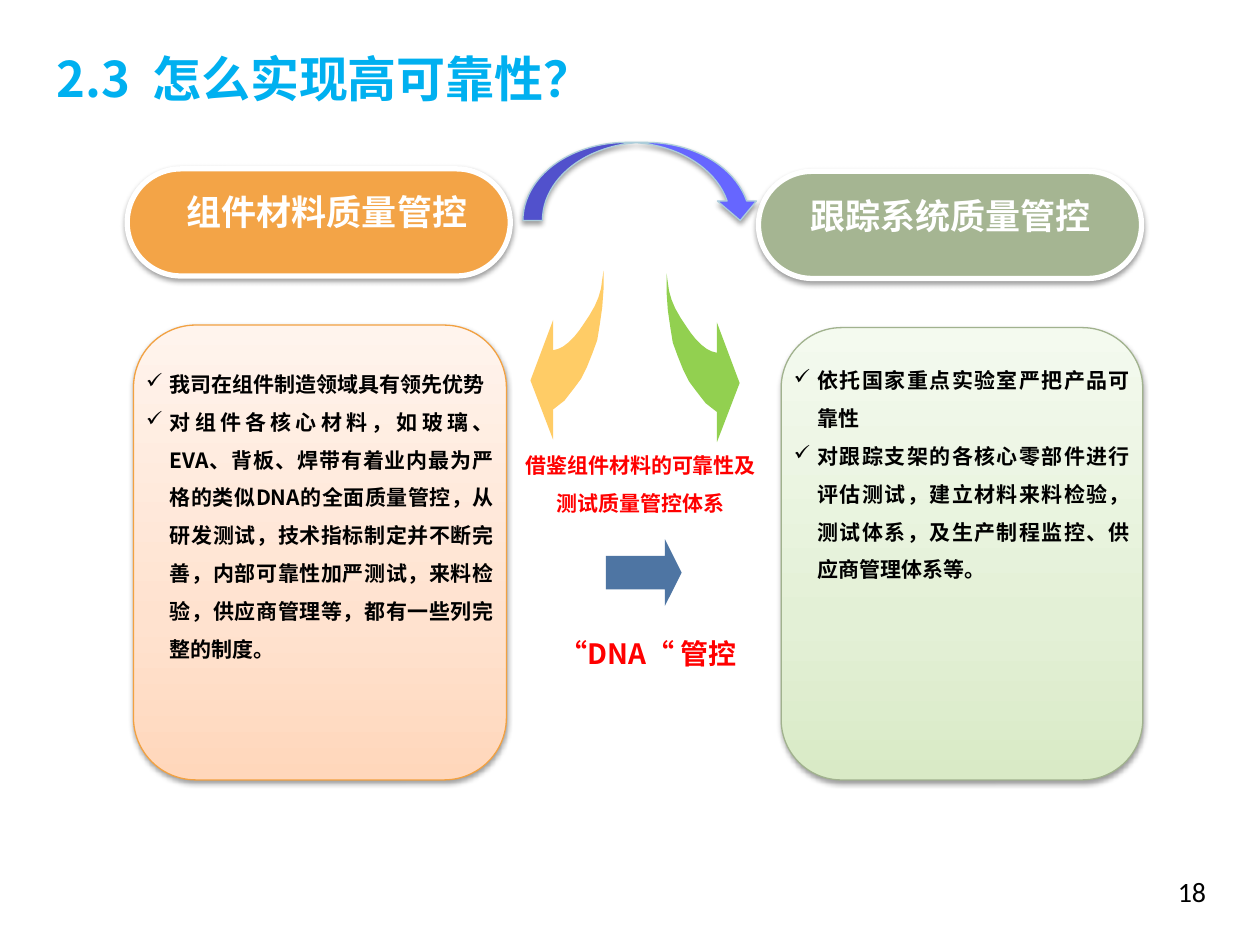
from typing import NamedTuple

from lxml import etree
from pptx import Presentation
from pptx.dml.color import RGBColor
from pptx.enum.shapes import MSO_SHAPE
from pptx.enum.text import MSO_ANCHOR, PP_ALIGN
from pptx.oxml import parse_xml
from pptx.oxml.ns import nsdecls, qn
from pptx.util import Inches, Pt

ROUND = MSO_SHAPE.ROUNDED_RECTANGLE
ARROW = MSO_SHAPE.RIGHT_ARROW
CURVE = MSO_SHAPE.CURVED_DOWN_ARROW
LEFT, CENTER, JUSTIFY = PP_ALIGN.LEFT, PP_ALIGN.CENTER, PP_ALIGN.JUSTIFY
TOP, MIDDLE = MSO_ANCHOR.TOP, MSO_ANCHOR.MIDDLE

HAN, LATIN = "Noto Sans CJK SC", "Calibri"
BLACK = RGBColor(0x00, 0x00, 0x00)
WHITE = RGBColor(0xFF, 0xFF, 0xFF)
RED = RGBColor(0xFF, 0x00, 0x00)
CYAN = RGBColor(0x00, 0xB0, 0xF0)
ORANGE = RGBColor(0xF3, 0xA4, 0x47)
AMBER = RGBColor(0xF2, 0xA1, 0x41)
SAGE = RGBColor(0xA5, 0xB5, 0x92)
MOSS = RGBColor(0xA1, 0xB2, 0x8E)
STEEL = RGBColor(0x4E, 0x75, 0xA3)
VIOLET = RGBColor(0x66, 0x66, 0xFF)
ICE = RGBColor(0xAD, 0xCE, 0xDA)
GOLD = RGBColor(0xFF, 0xCC, 0x66)
GREEN = RGBColor(0x92, 0xD0, 0x50)
PEACH = [RGBColor(0xFF, 0xD7, 0xBB), RGBColor(0xFF, 0xE2, 0xCF), RGBColor(0xFF, 0xF4, 0xED)]
LEAF = [RGBColor(0xD9, 0xEA, 0xC6), RGBColor(0xE3, 0xF0, 0xD6), RGBColor(0xF4, 0xFA, 0xEF)]
STOPS = (0, 35, 100)


class Box(NamedTuple):
    x: float
    y: float
    w: float
    h: float


class Topic(NamedTuple):
    head: str
    pill: Box
    label: Box
    fill: RGBColor
    card: Box
    shades: list[RGBColor]
    edge: RGBColor
    body: Box
    inset: float
    points: list[str]


class Swoosh(NamedTuple):
    x: float
    y: float
    side: int
    fill: RGBColor


TOPICS = [
    Topic("组件材料质量管控", Box(1.01, 1.34, 3.04, 0.85), Box(1.37, 1.42, 2.45, 0.48), ORANGE,
          Box(1.06, 2.58, 2.96, 3.61), PEACH, AMBER, Box(1.06, 2.8, 2.96, 2.52), 0.05,
          ["我司在组件制造领域具有领先优势",
           "对组件各核心材料，如玻璃、EVA、背板、焊带有着业内最为严格的类似DNA的全面质量管控，"
           "从研发测试，技术指标制定并不断完善，内部可靠性加严测试，来料检验，供应商管理等，"
           "都有一些列完整的制度。"]),
    Topic("跟踪系统质量管控", Box(6.02, 1.36, 3.04, 0.85), Box(6.32, 1.45, 2.45, 0.48), SAGE,
          Box(6.2, 2.6, 2.87, 3.59), LEAF, MOSS, Box(6.2, 2.73, 2.87, 1.96), 0.09,
          ["依托国家重点实验室严把产品可靠性",
           "对跟踪支架的各核心零部件进行评估测试，建立材料来料检验，测试体系，"
           "及生产制程监控、供应商管理体系等。"]),
]

# Outline of a swoosh, as offsets from its upper tip
CURL = [(0, 0), (0, 0.15), (0.01, 0.29), (0.03, 0.43), (0.05, 0.55), (0.09, 0.66),
        (0.13, 0.76), (0.18, 0.86), (0.24, 0.94), (0.31, 1.03), (0.4, 1.1), (0.4, 1.34),
        (0.58, 0.87), (0.4, 0.39), (0.4, 0.63), (0.36, 0.62), (0.32, 0.6), (0.28, 0.57),
        (0.23, 0.52), (0.19, 0.47), (0.15, 0.41), (0.11, 0.35), (0.07, 0.28),
        (0.04, 0.21), (0.02, 0.14), (0.01, 0.07)]
SWOOSHES = [Swoosh(4.79, 2.15, -1, GOLD), Swoosh(5.29, 2.17, 1, GREEN)]


def frame(box: Box) -> list[int]:
    return [Inches(side) for side in box]


def add_tick(para) -> None:
    props = para._p.get_or_add_pPr()
    props.set("marL", str(Inches(0.19)))
    props.set("indent", str(Inches(-0.19)))
    etree.SubElement(props, qn("a:buFont")).set("typeface", "Wingdings")
    etree.SubElement(props, qn("a:buChar")).set("char", "ü")


def add_text(slide, box: Box, *lines: str, size: float, color: RGBColor, font: str = HAN,
             bold: bool = True, align=LEFT, anchor=TOP, space: float = 1,
             inset: float = 0.05, wrap: bool = True, tick: bool = False) -> None:
    body = slide.shapes.add_textbox(*frame(box)).text_frame
    body.word_wrap = wrap
    body.vertical_anchor = anchor
    body.margin_top = Inches(inset)
    for i, line in enumerate(lines):
        para = body.paragraphs[0] if i == 0 else body.add_paragraph()
        para.alignment = align
        para.line_spacing = space
        if tick:
            add_tick(para)
        run = para.add_run()
        run.text = line
        run.font.name = font
        run.font.size = Pt(size)
        run.font.bold = bold
        run.font.color.rgb = color
        etree.SubElement(run._r.get_or_add_rPr(), qn("a:ea")).set("typeface", font)


def add_shade(shape) -> None:
    effects = shape._element.spPr.find(qn("a:effectLst"))
    effects.append(parse_xml(
        f'<a:outerShdw {nsdecls("a")} blurRad="{Pt(3.1)}" dist="{Pt(1.6)}" dir="5400000" '
        'rotWithShape="0"><a:srgbClr val="000000"><a:alpha val="38000"/></a:srgbClr>'
        '</a:outerShdw>'))


def paint(shape, fill: RGBColor, line: RGBColor | None = None, width: float = 0.75) -> None:
    shape.shadow.inherit = False
    shape.fill.solid()
    shape.fill.fore_color.rgb = fill
    if line is None:
        shape.line.fill.background()
    else:
        shape.line.color.rgb = line
        shape.line.width = Pt(width)
        add_shade(shape)


def blend(shape, shades: list[RGBColor]) -> None:
    stops = "".join(f'<a:gs pos="{pos * 1000}"><a:srgbClr val="{shade}"/></a:gs>'
                    for pos, shade in zip(STOPS, shades))
    props = shape._element.spPr
    props.replace(props.find(qn("a:solidFill")), parse_xml(
        f'<a:gradFill {nsdecls("a")} rotWithShape="1"><a:gsLst>{stops}</a:gsLst>'
        '<a:lin ang="16200000" scaled="0"/></a:gradFill>'))


def add_topic(slide, topic: Topic) -> None:
    pill = slide.shapes.add_shape(ROUND, *frame(topic.pill))
    pill.adjustments[0] = 0.5
    paint(pill, topic.fill, WHITE, 3)
    card = slide.shapes.add_shape(ROUND, *frame(topic.card))
    card.adjustments[0] = 0.167
    paint(card, topic.shades[0], topic.edge)
    blend(card, topic.shades)
    add_text(slide, topic.label, topic.head, size=20, color=WHITE, align=CENTER,
             inset=0.09, wrap=False)
    add_text(slide, topic.body, *topic.points, size=12, color=BLACK, align=JUSTIFY,
             space=1.5, inset=topic.inset, tick=True)


def add_swoosh(slide, item: Swoosh) -> None:
    spots = [(Inches(item.x + item.side * dx), Inches(item.y + dy)) for dx, dy in CURL]
    pen = slide.shapes.build_freeform(*spots[0])
    pen.add_line_segments(spots[1:], close=True)
    paint(pen.convert_to_shape(), item.fill)


def main() -> None:
    deck = Presentation()
    deck.slide_width, deck.slide_height = Inches(10), Inches(7.5)
    slide = deck.slides.add_slide(deck.slide_layouts[6])

    # Title and page number
    add_text(slide, Box(0.35, 0.33, 8.5, 0.57), "2.3  怎么实现高可靠性？",
             size=28, color=CYAN, anchor=MIDDLE)
    add_text(slide, Box(9.25, 6.89, 0.63, 0.4), "18", size=16, color=BLACK,
             font=LATIN, bold=False)

    # The two topics
    for topic in TOPICS:
        add_topic(slide, topic)

    # Arrows between them
    paint(slide.shapes.add_shape(CURVE, *frame(Box(4.15, 1.13, 1.88, 0.62))), VIOLET, ICE)
    for item in SWOOSHES:
        add_swoosh(slide, item)
    arrow = slide.shapes.add_shape(ARROW, *frame(Box(4.81, 4.28, 0.6, 0.53)))
    arrow.adjustments[1] = 0.25
    paint(arrow, STEEL)

    # Captions in the middle
    add_text(slide, Box(4.07, 3.44, 2.03, 0.71), "借鉴组件材料的可靠性及测试质量管控体系",
             size=12, color=RED, align=CENTER, space=1.5)
    add_text(slide, Box(4.13, 4.87, 2.03, 0.46), "“DNA“ 管控",
             size=16, color=RED, align=CENTER, space=1.5)

    deck.save("out.pptx")


if __name__ == "__main__":
    main()
